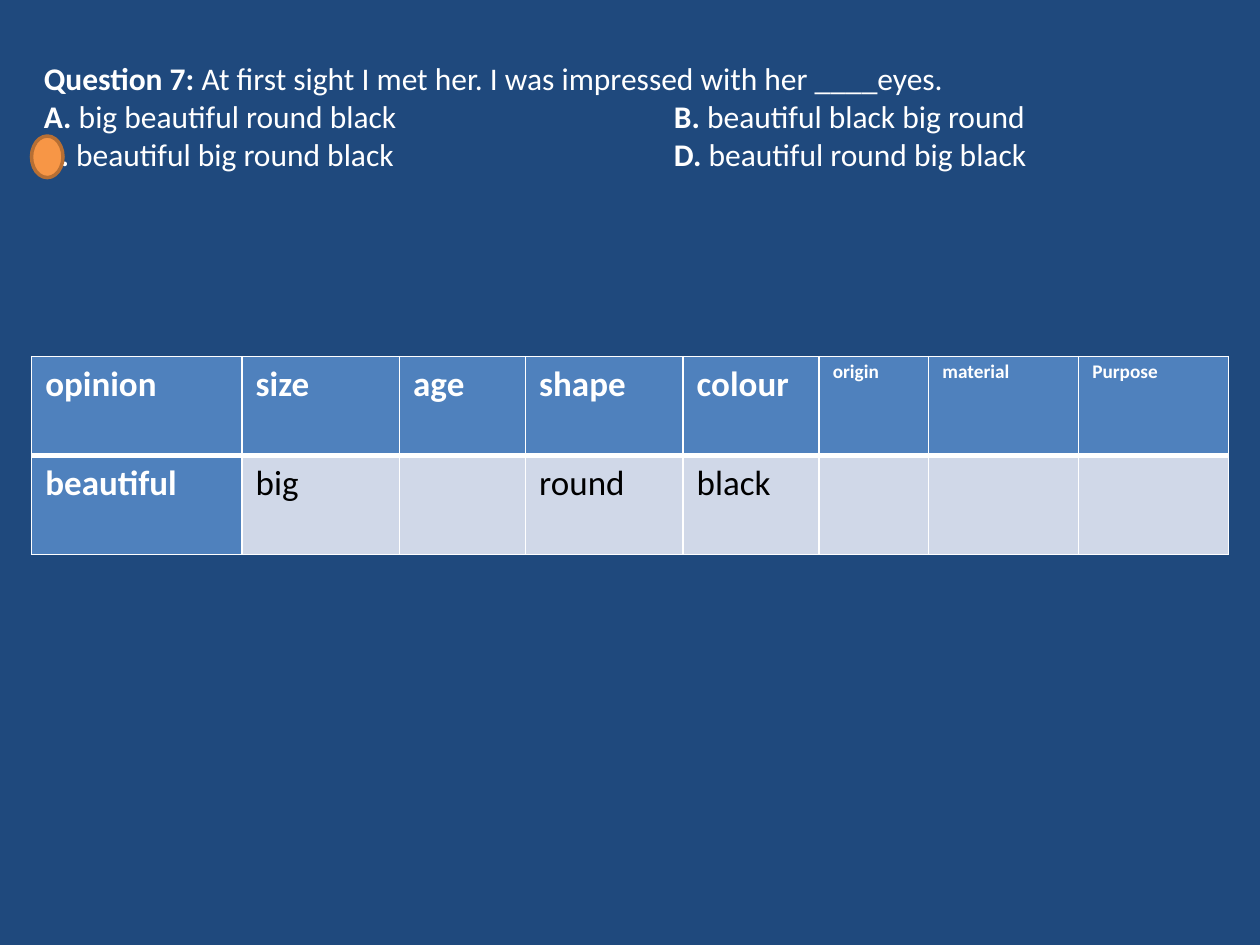
from dataclasses import dataclass

from lxml.etree import SubElement
from pptx import Presentation
from pptx.dml.color import RGBColor
from pptx.enum.shapes import MSO_SHAPE
from pptx.oxml import parse_xml
from pptx.oxml.ns import nsdecls, qn
from pptx.util import Inches, Pt


@dataclass(frozen=True)
class Theme:
    font: str = "Calibri"
    background: str = "1F497D"
    light: str = "FFFFFF"
    dark: str = "000000"
    header: str = "4F81BD"
    body: str = "D0D8E8"
    marker: str = "F79646"
    marker_line: str = "B76F34"
    question_size: int = 18
    table_size: int = 20
    small_size: int = 11


THEME = Theme()
QUESTION = [
    [("Question 7: ", True),
     ("At first sight I met her. I was impressed with her ____eyes.", False)],
    [("A.", True), (" big beautiful round black\t", False),
     ("B.", True), (" beautiful black big round", False)],
    [("C.", True), (" beautiful big round black\t", False),
     ("D.", True), (" beautiful round big black", False)],
]
COLUMNS = [
    ("opinion", "beautiful", 1.67),
    ("size", "big", 1.25),
    ("age", "", 1),
    ("shape", "round", 1.25),
    ("colour", "black", 1.08),
    ("origin", "", 0.87),
    ("material", "", 1.19),
    ("Purpose", "", 1.19),
]
SMALL_HEADERS = ("origin", "material", "Purpose")


def rgb(color):
    return RGBColor.from_string(color)


def add_text(p, text, *, size, color=THEME.light, bold=False):
    r = p.add_run()
    r.text = text
    r.font.name = THEME.font
    r.font.size = Pt(size)
    r.font.bold = bold
    r.font.color.rgb = rgb(color)


def set_tab(p, position):
    tabs = SubElement(p._p.get_or_add_pPr(), qn("a:tabLst"))
    SubElement(tabs, qn("a:tab"), pos=str(position), algn="l")


def add_question(s):
    sp = s.shapes.add_textbox(Inches(0.25), Inches(0.42), Inches(9.25), Inches(1.62))
    tf = sp.text_frame
    tf.word_wrap = True
    for i, runs in enumerate(QUESTION):
        p = tf.add_paragraph() if i else tf.paragraphs[0]
        if i:
            set_tab(p, Inches(5))
        for text, bold in runs:
            add_text(p, text, size=THEME.question_size, bold=bold)


def set_borders(cell, **widths):
    tcPr = cell._tc.get_or_add_tcPr()
    for i, side in enumerate("LRTB"):
        tcPr.insert(i, parse_xml(
            f'<a:ln{side} {nsdecls("a")} w="{Pt(widths.get(side, 1))}"><a:solidFill>'
            f'<a:srgbClr val="{THEME.light}"/></a:solidFill></a:ln{side}>'))


def format_cell(cell, text, *, heading, size, **borders):
    cell.fill.solid()
    cell.fill.fore_color.rgb = rgb(THEME.header if heading else THEME.body)
    cell.margin_left = cell.margin_right = Inches(0.07)
    cell.margin_top = cell.margin_bottom = 0
    set_borders(cell, **borders)
    if text:
        p = cell.text_frame.paragraphs[0]
        p.line_spacing = 1.15
        p._p.get_or_add_pPr().set("marL", str(Inches(0.04)))
        add_text(p, text, size=size, bold=heading,
                 color=THEME.light if heading else THEME.dark)


def add_adjective_table(s):
    table = s.shapes.add_table(2, len(COLUMNS), Inches(0.25), Inches(2.83),
                               Inches(9.5), Inches(1.57)).table
    for col, (header, word, width) in enumerate(COLUMNS):
        table.columns[col].width = Inches(width)
        size = THEME.small_size if header in SMALL_HEADERS else THEME.table_size
        format_cell(table.cell(0, col), header, heading=True, size=size, B=3)
        format_cell(table.cell(1, col), word, heading=col == 0,
                    size=THEME.table_size, T=3)


def add_answer_marker(s):
    sp = s.shapes.add_shape(MSO_SHAPE.OVAL, Inches(0.25), Inches(1.08),
                            Inches(0.25), Inches(0.33))
    sp.shadow.inherit = False
    sp.fill.solid()
    sp.fill.fore_color.rgb = rgb(THEME.marker)
    sp.line.color.rgb = rgb(THEME.marker_line)
    sp.line.width = Pt(2)


def main():
    prs = Presentation()
    prs.slide_width, prs.slide_height = Inches(10), Inches(7.5)
    s = prs.slides.add_slide(prs.slide_layouts[6])
    s.background.fill.solid()
    s.background.fill.fore_color.rgb = rgb(THEME.background)
    add_question(s)
    add_adjective_table(s)
    add_answer_marker(s)
    prs.save("out.pptx")


if __name__ == "__main__":
    main()
